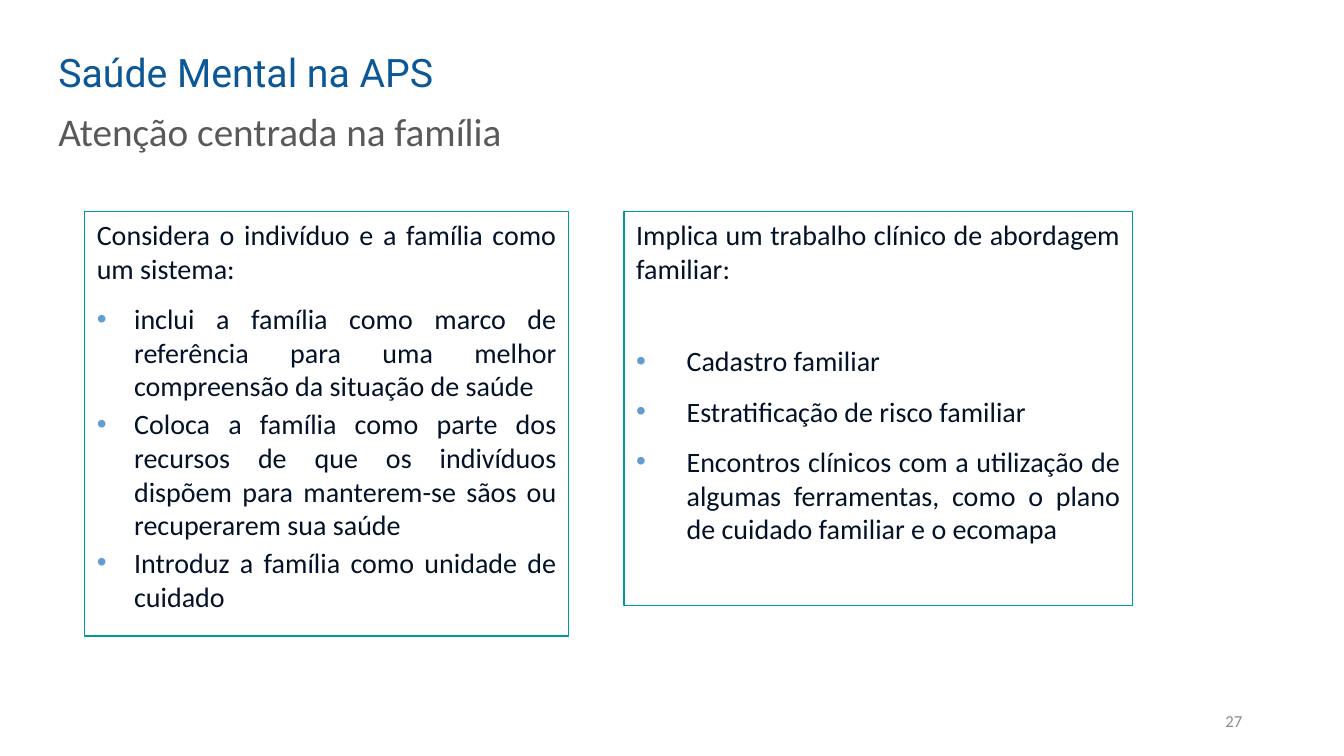
import pptx
import pptx.dml.color
import pptx.enum.shapes
import pptx.enum.text
import pptx.oxml
import pptx.oxml.ns
import pptx.util
from pptx.util import Inches

COLORS = {
    "title": "0C5896",
    "subtitle": "595959",
    "number": "8C8C8C",
    "text": "031227",
    "bullet": "629DD1",
    "border": "009999",
    "white": "FFFFFF",
}
ALIGN = pptx.enum.text.PP_ALIGN
ANCHOR = pptx.enum.text.MSO_ANCHOR


def rgb(name):
    return pptx.dml.color.RGBColor.from_string(COLORS[name])


def add_bullet(p, indent):
    pPr = p._p.get_or_add_pPr()
    pPr.set("marL", str(Inches(indent)))
    pPr.set("indent", str(-Inches(indent)))
    ns = pptx.oxml.ns.nsdecls("a")
    for xml in (
        f'<a:buClr {ns}><a:srgbClr val="{COLORS["bullet"]}"/></a:buClr>',
        f'<a:buFont {ns} typeface="Arial"/>',
        f'<a:buChar {ns} char="•"/>',
    ):
        pPr.append(pptx.oxml.parse_xml(xml))


def write(p, text, size=20, color="text", font="Calibri", align=ALIGN.LEFT,
          before=0, spacing=None, indent=None):
    """Fill one paragraph; an indent makes it a bullet."""
    if indent:
        add_bullet(p, indent)
    p.alignment = align
    p.space_before = pptx.util.Pt(before)
    if spacing:
        p.line_spacing = spacing
    r = p.add_run()
    r.text = text
    r.font.size = pptx.util.Pt(size)
    r.font.name = font
    r.font.color.rgb = rgb(color)


def add_heading(slide, left, top, width):
    # Title
    title = slide.shapes.title
    title.left, title.top = Inches(left), Inches(top)
    title.width, title.height = Inches(width), Inches(0.57)
    tf = title.text_frame
    tf.word_wrap = True
    tf.vertical_anchor = ANCHOR.TOP
    write(tf.paragraphs[0], "Saúde Mental na APS", size=28, color="title",
          font="Roboto")
    # Subtitle
    sp = slide.shapes.add_textbox(Inches(left), Inches(top + 0.64),
                                  Inches(10.99), Inches(0.6))
    sp.text_frame.word_wrap = True
    write(sp.text_frame.paragraphs[0], "Atenção centrada na família", size=28,
          color="subtitle", spacing=0.9)


def add_panel(slide, left, top, width, height, lead, bullets, indent,
              first_gap, gap):
    """Bordered box with a lead sentence and bullets under it."""
    sp = slide.shapes.add_shape(
        pptx.enum.shapes.MSO_SHAPE.RECTANGLE,
        Inches(left), Inches(top), Inches(width), Inches(height))
    sp.shadow.inherit = False
    sp.fill.solid()
    sp.fill.fore_color.rgb = rgb("white")
    sp.line.color.rgb = rgb("border")
    sp.line.width = pptx.util.Pt(1)
    tf = sp.text_frame
    tf.word_wrap = True
    tf.vertical_anchor = ANCHOR.TOP
    tf.margin_left = tf.margin_right = Inches(0.12)
    tf.margin_top = tf.margin_bottom = Inches(0.06)
    write(tf.paragraphs[0], lead, align=ALIGN.JUSTIFY)
    for i, text in enumerate(bullets):
        write(tf.add_paragraph(), text, align=ALIGN.JUSTIFY, indent=indent,
              before=gap if i else first_gap)


def add_page_number(slide, left, top, width, height):
    sp = slide.shapes.add_textbox(Inches(left), Inches(top), Inches(width),
                                  Inches(height))
    tf = sp.text_frame
    tf.word_wrap = True
    tf.vertical_anchor = ANCHOR.MIDDLE
    write(tf.paragraphs[0], "27", size=12, color="number", align=ALIGN.RIGHT)


def main():
    prs = pptx.Presentation()
    prs.slide_width, prs.slide_height = Inches(13.33), Inches(7.5)
    slide = prs.slides.add_slide(prs.slide_layouts[5])

    add_heading(slide, 0.48, 0.43, 7.08)
    # Family as a system
    add_panel(
        slide, 0.84, 2.1, 4.8, 4.21,
        "Considera o indivíduo e a família como um sistema:",
        ["inclui a família como marco de referência para uma melhor "
         "compreensão da situação de saúde",
         "Coloca a família como parte dos recursos de que os indivíduos "
         "dispõem para manterem-se sãos ou recuperarem sua saúde",
         "Introduz a família como unidade de cuidado"],
        indent=0.37, first_gap=12, gap=3)
    # Clinical work with the family
    add_panel(
        slide, 6.19, 2.1, 5.04, 3.91,
        "Implica um trabalho clínico de abordagem familiar:",
        ["Cadastro familiar",
         "Estratificação de risco familiar",
         "Encontros clínicos com a utilização de algumas ferramentas, "
         "como o plano de cuidado familiar e o ecomapa"],
        indent=0.5, first_gap=42, gap=12)
    add_page_number(slide, 9.42, 6.95, 3, 0.4)

    prs.save("out.pptx")


if __name__ == "__main__":
    main()
